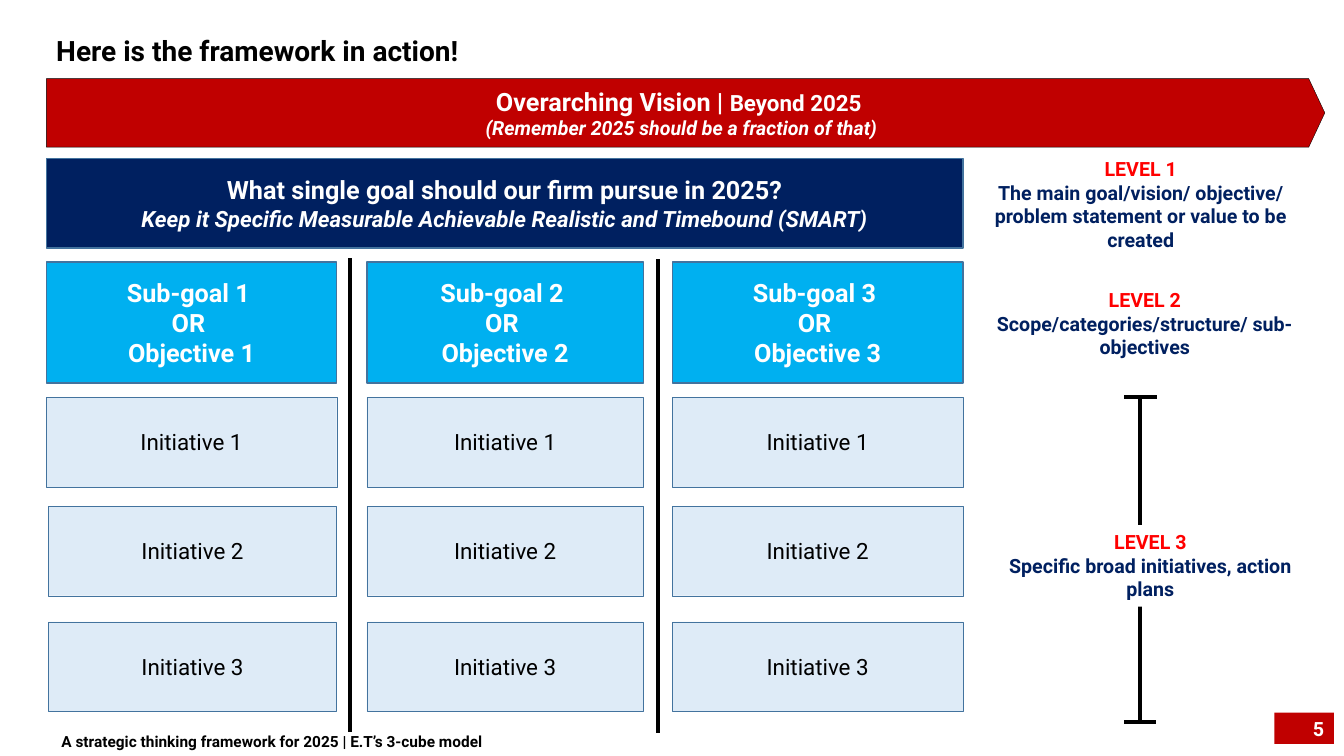
"""Builds the strategic framework slide: vision, goal, sub-goals, initiatives and levels."""
from lxml import etree
from pptx import Presentation
from pptx import util as u
from pptx.dml import color
from pptx.enum import shapes, text
from pptx.oxml import ns

COLOURS = {"black": "000000", "white": "FFFFFF", "red": "FF0000", "crimson": "C00000",
           "navy": "002060", "sky": "00B0F0", "pale": "DEEBF7", "edge": "43739E"}
RGB = {name: color.RGBColor.from_string(value) for name, value in COLOURS.items()}
KIND = shapes.MSO_SHAPE
ALIGN = text.PP_ALIGN
ANCHOR = text.MSO_ANCHOR

deck = Presentation()
deck.slide_width, deck.slide_height = u.Inches(13.33), u.Inches(7.5)
slide = deck.slides.add_slide(deck.slide_layouts[6])


def write(part, paragraphs, align=ALIGN.CENTER, anchor=ANCHOR.MIDDLE):
    """Each paragraph is a list of runs: wording, colour name and font values."""
    frame = part.text_frame
    for name, value in {"word_wrap": True, "vertical_anchor": anchor}.items():
        setattr(frame, name, value)
    for index, runs in enumerate(paragraphs):
        paragraph = frame.add_paragraph() if index else frame.paragraphs[0]
        paragraph.alignment = align
        for wording, colour, size, values in runs:
            run = paragraph.add_run()
            run.text = wording
            run.font.color.rgb = RGB[colour]
            font = {"name": "Roboto", "size": u.Pt(size), "bold": True, **values}
            for name, value in font.items():
                setattr(run.font, name, value)


def block(kind, box, fill, edge=None, weight=1, point=None):
    """Adds a filled preset shape, outlined when an edge colour is named."""
    part = slide.shapes.add_shape(kind, *map(u.Inches, box))
    part.shadow.inherit = False
    part.fill.solid()
    part.fill.fore_color.rgb = RGB[fill]
    if edge:
        part.line.color.rgb = RGB[edge]
        part.line.width = u.Pt(weight)
    else:
        part.line.fill.background()
    if point is not None:
        part.adjustments[0] = point
    return part


captions = [
    ((0.46, 0.28, 12.37, 0.44), ALIGN.LEFT,
     [("Here is the framework in action!", "black", 20)]),
    ((9.65, 1.51, 3.33, 1.04), ALIGN.CENTER,
     [("LEVEL 1", "red", 14),
      ("The main goal/vision/ objective/ problem statement or value to be created", "navy", 14)]),
    ((9.69, 2.81, 3.33, 0.81), ALIGN.CENTER,
     [("LEVEL 2", "red", 14),
      ("Scope/categories/structure/ sub-objectives", "navy", 14)]),
    ((0.51, 7.21, 5.77, 0.29), ALIGN.LEFT,
     [("A strategic thinking framework for 2025 | E.T’s 3-cube model", "black", 11)]),
]
for box, align, lines in captions:
    caption = slide.shapes.add_textbox(*map(u.Inches, box))
    write(caption, [[(*line, {})] for line in lines], align, ANCHOR.TOP)

vision = block(KIND.PENTAGON, (0.46, 0.78, 12.68, 0.68), "crimson", "black", 0.25, 0.234)
write(vision, [
    [("Overarching Vision | ", "white", 18, {}), ("Beyond 2025 ", "white", 16, {})],
    [("(Remember 2025 should be a fraction of that)", "white", 14, {"italic": True})],
])

goal = block(KIND.PENTAGON, (0.46, 1.57, 9.09, 0.89), "navy", "edge", 1, 0)
write(goal, [
    [("What single goal should our firm pursue in 2025?", "white", 18, {})],
    [("Keep it Specific Measurable Achievable Realistic and Timebound (SMART)",
      "white", 16, {"italic": True})],
])

columns = [(0.46, 2.88, KIND.PENTAGON), (3.64, 2.74, KIND.CHEVRON), (6.67, 2.88, KIND.CHEVRON)]
initiative_tops = [3.94, 5.02, 6.17]
for number, (left, width, kind) in enumerate(columns, 1):
    subgoal = block(kind, (left, 2.6, width, 1.2), "sky", "edge", 1, 0)
    wording = [f"Sub-goal {number} ", "OR ", f"Objective {number}"]
    write(subgoal, [[(line, "white", 18, {})] for line in wording])
    for step, top in enumerate(initiative_tops, 1):
        inset = 0.02 if number == 1 and step > 1 else 0
        initiative = block(KIND.RECTANGLE, (left + inset, top, width - inset, 0.89),
                           "pale", "edge", 0.25)
        write(initiative, [[(f"Initiative {step}", "black", 16, {"bold": False})]])

rules = [
    (3.47, 2.56, 3.47, 7.26),
    (6.53, 2.57, 6.53, 7.27),
    (11.31, 3.94, 11.31, 7.15),
    (11.15, 3.94, 11.48, 3.94),
    (11.15, 7.16, 11.47, 7.16),
]
for ends in rules:
    rule = slide.shapes.add_connector(shapes.MSO_CONNECTOR.STRAIGHT, *map(u.Inches, ends))
    rule.line.color.rgb = RGB["black"]
    rule.line.width = u.Pt(3)
    etree.SubElement(rule._element.spPr, ns.qn("a:effectLst"))

level_three = block(KIND.RECTANGLE, (9.69, 5.21, 3.44, 0.81), "white")
write(level_three, [
    [("LEVEL 3", "red", 14, {})],
    [("Specific broad initiatives, action plans", "navy", 14, {})],
], anchor=ANCHOR.TOP)

page_number = block(KIND.RECTANGLE, (12.64, 7.07, 0.59, 0.31), "crimson")
write(page_number, [[("5", "white", 14, {})]], ALIGN.RIGHT)

deck.save("out.pptx")
